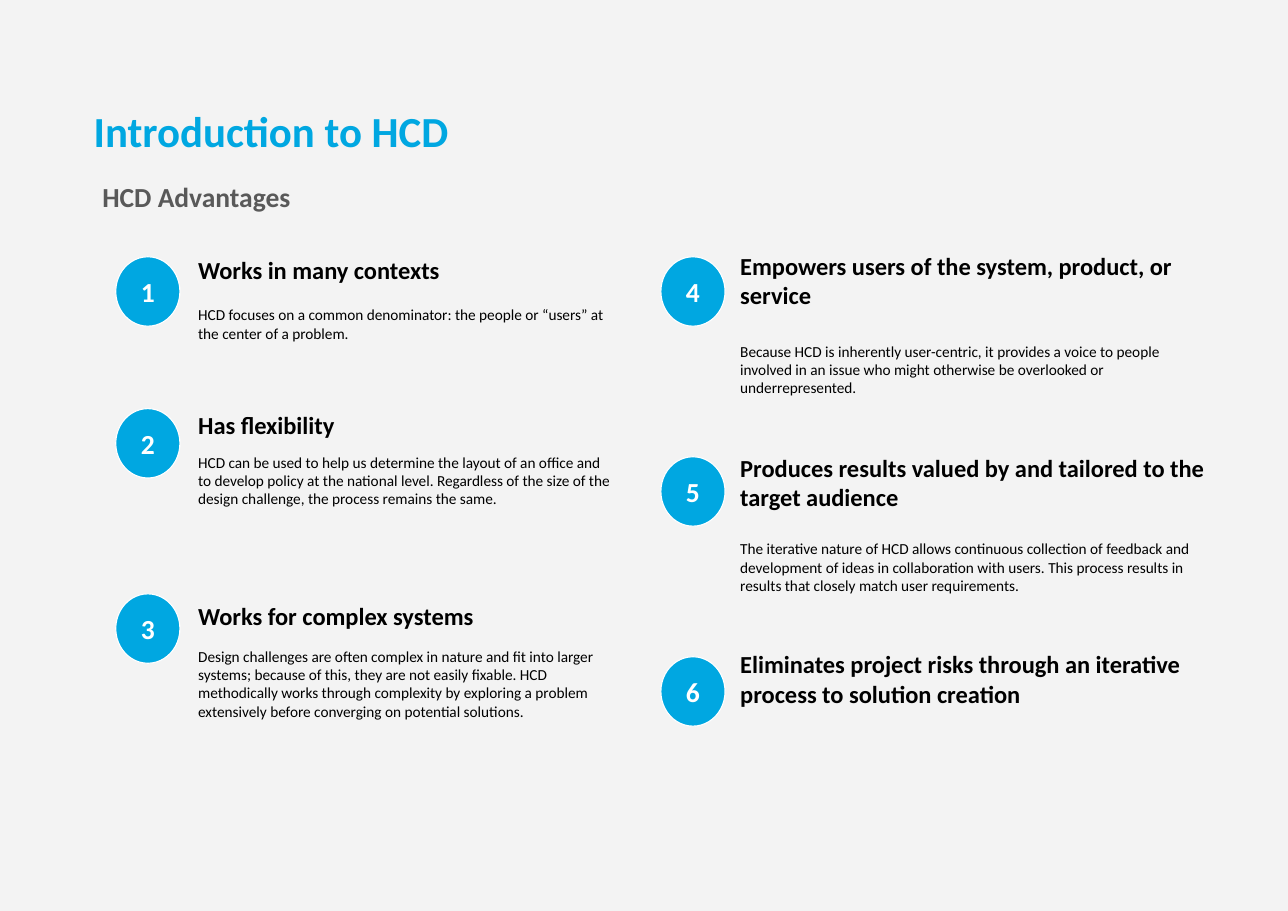
from dataclasses import dataclass

from pptx import Presentation
from pptx.dml.color import RGBColor
from pptx.enum.shapes import MSO_SHAPE
from pptx.enum.text import MSO_ANCHOR, MSO_AUTO_SIZE, PP_ALIGN
from pptx.util import Cm, Pt

FONT = "Calibri"
SKY, WHITE, BLACK, GRAY, PAPER = "00A7E1", "FFFFFF", "000000", "595959", "F3F3F3"
BADGE_WIDTH, BADGE_HEIGHT = 1.48, 1.6


@dataclass
class Advantage:
    """One numbered advantage; drops are measured from the top of its badge."""
    top: float
    heading: str
    heading_drop: float
    heading_width: float
    heading_height: float
    detail: str = ""
    detail_drop: float = 0
    detail_width: float = 0
    detail_height: float = 0


LEFT_ADVANTAGES = [
    Advantage(5.92, "Works in many contexts", -0.15, 8.46, 0.91,
              "HCD focuses on a common denominator: the people or “users” at "
              "the center of a problem.", 0.89, 10.03, 1.3),
    Advantage(9.42, "Has flexibility", -0.08, 8.46, 0.91,
              "HCD can be used to help us determine the layout of an office and "
              "to develop policy at the national level. Regardless of the size of the "
              "design challenge, the process remains the same.", 0.79, 10.03, 1.73),
    Advantage(13.69, "Works for complex systems", 0.05, 8.46, 0.91,
              "Design challenges are often complex in nature and fit into larger "
              "systems; because of this, they are not easily fixable. HCD "
              "methodically works through complexity by exploring a problem "
              "extensively before converging on potential solutions.", 0.99, 9.7, 2.16),
]
RIGHT_ADVANTAGES = [
    Advantage(5.92, "Empowers users of the system, product, or service", -0.25, 10.46, 1.6,
              "Because HCD is inherently user-centric, it provides a voice to people "
              "involved in an issue who might otherwise be overlooked or "
              "underrepresented.", 1.73, 11.1, 1.73),
    Advantage(10.53, "Produces results valued by and tailored to the target audience",
              -0.2, 11.35, 1.6,
              "The iterative nature of HCD allows continuous collection of feedback and "
              "development of ideas in collaboration with users. This process results in "
              "results that closely match user requirements.", 1.68, 10.87, 1.73),
    Advantage(15.14, "Eliminates project risks through an iterative process to solution creation",
              -0.28, 10.87, 1.6),
]


def color(hex_code):
    """Turn a hex string into a colour."""
    return RGBColor.from_string(hex_code)


def write(holder, text, size, ink, bold=False, align=PP_ALIGN.LEFT,
          anchor=MSO_ANCHOR.TOP, inset=(0.23, 0.23), spacing=None):
    """Fill a shape with one formatted paragraph."""
    frame = holder.text_frame
    frame.word_wrap = True
    frame.auto_size = MSO_AUTO_SIZE.NONE
    frame.vertical_anchor = anchor
    frame.margin_left = frame.margin_right = Cm(inset[0])
    frame.margin_top = frame.margin_bottom = Cm(inset[1])
    paragraph = frame.paragraphs[0]
    paragraph.alignment = align
    if spacing:
        paragraph.line_spacing = spacing
    run = paragraph.add_run()
    run.text = text
    run.font.name, run.font.size, run.font.bold = FONT, Pt(size), bold
    run.font.color.rgb = color(ink)


def add_label(slide, text, left, top, width, height, **style):
    """Add a text box with one formatted paragraph."""
    label = slide.shapes.add_textbox(Cm(left), Cm(top), Cm(width), Cm(height))
    write(label, text, **style)


def add_badge(slide, number, left, top):
    """Draw the numbered oval of one advantage."""
    badge = slide.shapes.add_shape(MSO_SHAPE.OVAL, Cm(left), Cm(top),
                                   Cm(BADGE_WIDTH), Cm(BADGE_HEIGHT))
    badge.shadow.inherit = False
    badge.fill.solid()
    badge.fill.fore_color.rgb = color(SKY)
    badge.line.color.rgb = color(WHITE)
    badge.line.width = Pt(0.75)
    write(badge, str(number), size=18, ink=WHITE, bold=True,
          align=PP_ALIGN.CENTER, anchor=MSO_ANCHOR.MIDDLE)


def add_header(slide, left, top):
    """Place the slide title and the subtitle below it."""
    title = slide.shapes.title
    title.left, title.top, title.width, title.height = Cm(left), Cm(top), Cm(19.53), Cm(1.96)
    write(title, "Introduction to HCD", size=28, ink=SKY, bold=True,
          anchor=MSO_ANCHOR.MIDDLE, inset=(0.28, 0.16), spacing=0.86)
    add_label(slide, "HCD Advantages", left + 0.23, top + 1.8, 8, 1.32,
              size=18, ink=GRAY, bold=True, inset=(0.25, 0.25))


def add_column(slide, left, text_left, first_number, advantages):
    """Place a column of badges with headings and details to their right."""
    for number, item in enumerate(advantages, first_number):
        add_badge(slide, number, left, item.top)
        add_label(slide, item.heading, text_left, item.top + item.heading_drop,
                  item.heading_width, item.heading_height,
                  size=16, ink=BLACK, bold=True, inset=(0.23, 0.11))
        if item.detail:
            add_label(slide, item.detail, text_left, item.top + item.detail_drop,
                      item.detail_width, item.detail_height, size=10, ink=BLACK)


def main():
    """Build and save the slide."""
    deck = Presentation()
    deck.slide_width, deck.slide_height = Cm(29.7), Cm(21)
    slide = deck.slides.add_slide(deck.slide_layouts.get_by_name("Title Only"))
    slide.background.fill.solid()
    slide.background.fill.fore_color.rgb = color(PAPER)
    add_header(slide, 1.88, 2.11)
    add_column(slide, 2.67, 4.34, 1, LEFT_ADVANTAGES)
    add_column(slide, 15.24, 16.84, 4, RIGHT_ADVANTAGES)
    deck.save("out.pptx")


if __name__ == "__main__":
    main()
